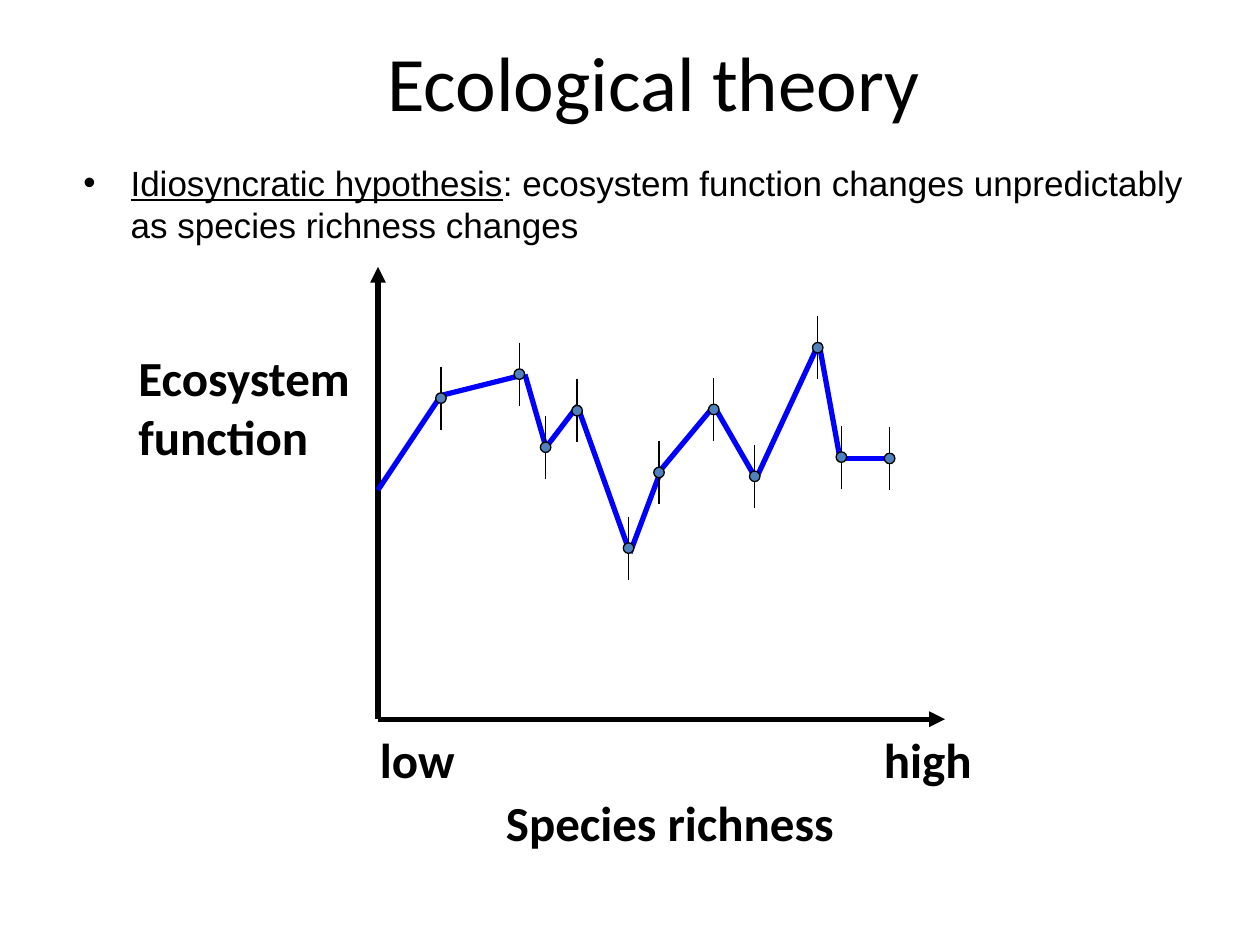
from dataclasses import dataclass
from itertools import pairwise

from lxml import etree
from pptx import Presentation
from pptx.dml.color import RGBColor
from pptx.enum.shapes import MSO_CONNECTOR, MSO_SHAPE
from pptx.enum.text import MSO_ANCHOR, PP_ALIGN
from pptx.oxml.ns import qn
from pptx.util import Pt

STRAIGHT = MSO_CONNECTOR.STRAIGHT
OVAL = MSO_SHAPE.OVAL
TOP, MIDDLE = MSO_ANCHOR.TOP, MSO_ANCHOR.MIDDLE
LEFT, CENTER = PP_ALIGN.LEFT, PP_ALIGN.CENTER


@dataclass(frozen=True)
class Theme:
    ink: RGBColor = RGBColor(0, 0, 0)
    trend: RGBColor = RGBColor(0, 0, 255)
    dot: RGBColor = RGBColor(0x4F, 0x81, 0xBD)
    head: str = "Calibri"
    body: str = "Arial"
    title: int = 44
    label: int = 28
    text: int = 20
    thick: float = 3
    thin: float = 0.75


THEME = Theme()

# Axes and data, in points
ORIGIN = (216, 411)
Y_END = (216, 152.5)
X_END = (540, 411)
TREND = [(216, 280), (252, 226), (300, 214), (312, 255.6), (330, 232),
         (360, 316), (378, 268), (408, 232), (432, 273.6), (468, 196),
         (480, 262), (510, 262)]
MEANS = [(252, 227.5), (296.8, 213.8), (311.8, 255.6), (329.8, 234.7),
         (359.2, 313.2), (376.6, 270), (407.9, 234), (431.3, 272.2),
         (467.3, 198.7), (480.8, 261.2), (508.4, 262)]
ERROR = 18
DOT = 6


def add_text(slide, box, *paras, size=THEME.label, font=THEME.head,
             bold=False, align=LEFT, anchor=TOP):
    """Each paragraph is a list of (text, underlined) runs."""
    shape = slide.shapes.add_textbox(*map(Pt, box))
    frame = shape.text_frame
    frame.word_wrap = True
    frame.vertical_anchor = anchor
    for i, runs in enumerate(paras):
        para = frame.paragraphs[0] if i == 0 else frame.add_paragraph()
        para.alignment = align
        for text, under in runs:
            run = para.add_run()
            run.text = text
            run.font.name = font
            run.font.size = Pt(size)
            run.font.bold = bold
            run.font.underline = under
            run.font.color.rgb = THEME.ink
    return frame.paragraphs[0]


def add_label(slide, box, *lines):
    return add_text(slide, box, *([(line, False)] for line in lines), bold=True)


def add_bullet(para, indent):
    para.space_before = Pt(2)
    props = para._p.get_or_add_pPr()
    props.set("marL", str(Pt(indent)))
    props.set("indent", str(-Pt(indent)))
    etree.SubElement(props, qn("a:buFont"), typeface=THEME.body)
    etree.SubElement(props, qn("a:buChar"), char="•")


def add_tab(para, pos):
    tabs = etree.SubElement(para._p.get_or_add_pPr(), qn("a:tabLst"))
    etree.SubElement(tabs, qn("a:tab"), pos=str(Pt(pos)), algn="l")


def add_line(slide, start, end, color=THEME.ink, width=THEME.thick, arrow=False):
    line = slide.shapes.add_connector(STRAIGHT, *map(Pt, (*start, *end)))
    line.line.color.rgb = color
    line.line.width = Pt(width)
    if arrow:
        etree.SubElement(line.line._get_or_add_ln(), qn("a:tailEnd"),
                         type="triangle")
    etree.SubElement(line._element.spPr, qn("a:effectLst"))


def add_mean(slide, x, y):
    add_line(slide, (x, y - ERROR), (x, y + ERROR), width=THEME.thin)
    box = (x - DOT / 2, y - DOT / 2, DOT, DOT)
    dot = slide.shapes.add_shape(OVAL, *map(Pt, box))
    dot.shadow.inherit = False
    dot.fill.solid()
    dot.fill.fore_color.rgb = THEME.dot
    dot.line.color.rgb = THEME.ink
    dot.line.width = Pt(THEME.thin)


def main():
    deck = Presentation()
    deck.slide_width, deck.slide_height = Pt(720), Pt(540)
    slide = deck.slides.add_slide(deck.slide_layouts[6])

    # Title and hypothesis
    add_text(slide, (49.5, 1, 648, 90), [("Ecological theory", False)],
             size=THEME.title, align=CENTER, anchor=MIDDLE)
    claim = add_text(
        slide, (40.5, 88.5, 644, 60),
        [("Idiosyncratic hypothesis", True),
         (": ecosystem function changes unpredictably as species richness"
          " changes", False)],
        size=THEME.text, font=THEME.body)
    add_bullet(claim, 27)

    # Axes and their labels
    for end in (Y_END, X_END):
        add_line(slide, ORIGIN, end, arrow=True)
    add_label(slide, (72, 195, 148, 74), "Ecosystem", "function")
    add_label(slide, (282, 449.5, 207, 41), "Species richness")
    scale = add_label(slide, (210, 413.5, 356, 41), "low\thigh")
    add_tab(scale, 288)

    # Trend, then means with error bars
    for start, end in pairwise(TREND):
        add_line(slide, start, end, color=THEME.trend)
    for x, y in MEANS:
        add_mean(slide, x, y)

    deck.save("out.pptx")


if __name__ == "__main__":
    main()
